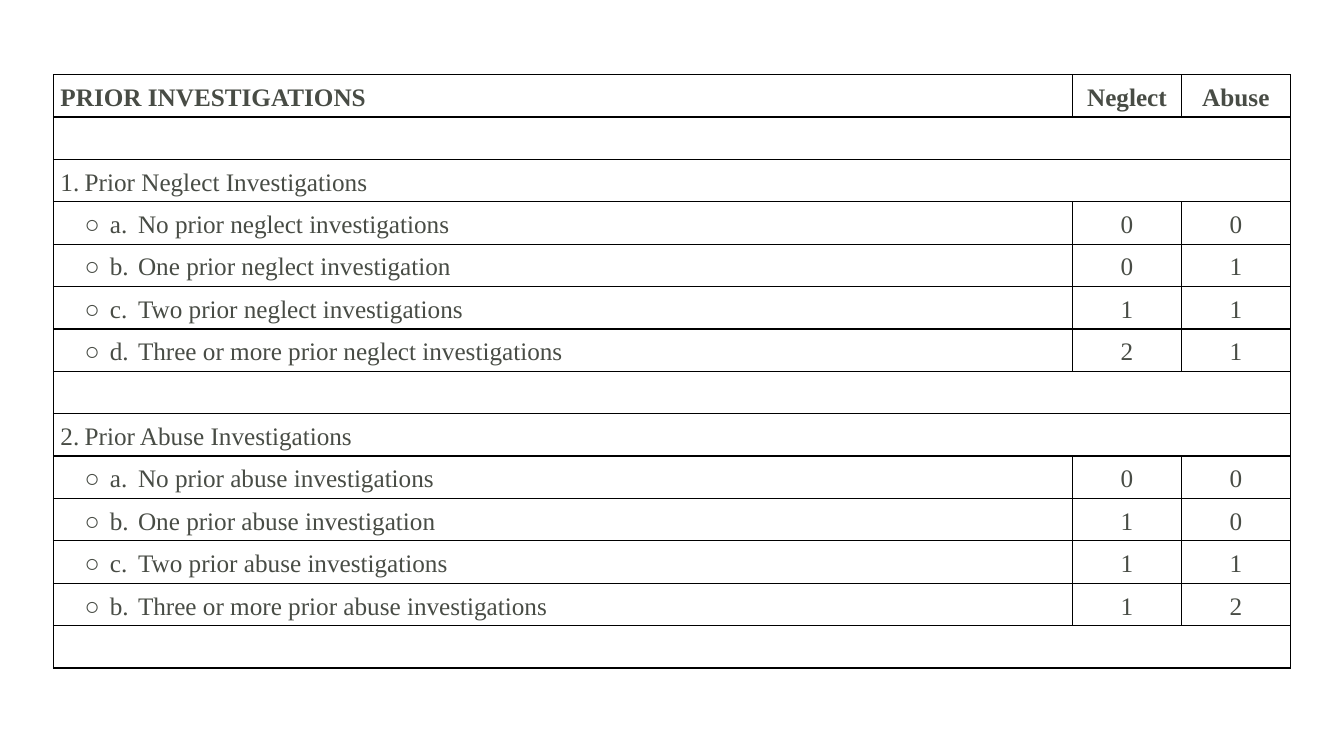
from pptx import Presentation
from pptx.dml.color import RGBColor
from pptx.enum.text import MSO_ANCHOR as Anchor, PP_ALIGN as Align
from pptx.oxml import parse_xml
from pptx.oxml.ns import nsdecls
from pptx.util import Pt

INK = RGBColor(0x48, 0x4C, 0x45)
LINE = RGBColor(0, 0, 0)
WIDTHS = [727.9, 77.8, 77.8]
ROW = 30.28
HEAD_TABS = [17.3, 35.3, 55.4]
FORMAT = {"name": "Times New Roman", "size": Pt(18)}
INSETS = {"margin_left": Pt(5), "margin_right": Pt(5),
          "margin_top": 0, "margin_bottom": 0,
          "vertical_anchor": Anchor.MIDDLE}

# One tuple per row: a single entry spans the whole table
rows = [
    ("PRIOR INVESTIGATIONS", "Neglect", "Abuse"),
    ("",),
    ("1.\tPrior Neglect Investigations",),
    ("\t○\ta.\tNo prior neglect investigations", "0", "0"),
    ("\t○\tb.\tOne prior neglect investigation", "0", "1"),
    ("\t○\tc.\tTwo prior neglect investigations", "1", "1"),
    ("\t○\td.\tThree or more prior neglect investigations", "2", "1"),
    ("",),
    ("2.\tPrior Abuse Investigations",),
    ("\t○\ta.\tNo prior abuse investigations", "0", "0"),
    ("\t○\tb.\tOne prior abuse investigation", "1", "0"),
    ("\t○\tc.\tTwo prior abuse investigations", "1", "1"),
    ("\t○\tb.\tThree or more prior abuse investigations", "1", "2"),
    ("",),
]


def add_lines(cell):
    props = cell._tc.get_or_add_tcPr()
    for side in ("lnL", "lnR", "lnT", "lnB"):
        props.append(parse_xml(
            f'<a:{side} {nsdecls("a")} w="{Pt(1)}"><a:solidFill>'
            f'<a:srgbClr val="{LINE}"/></a:solidFill></a:{side}>'))


def add_tabs(para, stops):
    tabs = "".join(f'<a:tab pos="{Pt(stop)}" algn="l"/>' for stop in stops)
    para._p.get_or_add_pPr().append(
        parse_xml(f'<a:tabLst {nsdecls("a")}>{tabs}</a:tabLst>'))


deck = Presentation()
deck.slide_width, deck.slide_height = Pt(960), Pt(540)
slide = deck.slides.add_slide(deck.slide_layouts[6])

# Table grid
frame = slide.shapes.add_table(len(rows), len(WIDTHS), Pt(38.2), Pt(53.3),
                               Pt(sum(WIDTHS)), Pt(ROW * len(rows)))
table = frame.table
table.first_row = table.horz_banding = False
for col, width in zip(table.columns, WIDTHS):
    col.width = Pt(width)
for row in table.rows:
    row.height = Pt(ROW)

# Cells: borders, then text
for r, texts in enumerate(rows):
    for c in range(len(WIDTHS)):
        cell = table.cell(r, c)
        add_lines(cell)
        cell.fill.background()
        for key, value in INSETS.items():
            setattr(cell, key, value)
    if len(texts) == 1:
        table.cell(r, 0).merge(table.cell(r, len(WIDTHS) - 1))
    for c, text in enumerate(texts):
        if not text:
            continue
        para = table.cell(r, c).text_frame.paragraphs[0]
        if "\t" in text:
            add_tabs(para, HEAD_TABS)
        para.line_spacing = 1.15
        para.alignment = Align.CENTER if c else Align.LEFT
        run = para.add_run()
        run.text = text
        for key, value in FORMAT.items():
            setattr(run.font, key, value)
        run.font.bold = r == 0
        run.font.color.rgb = INK

deck.save("out.pptx")
